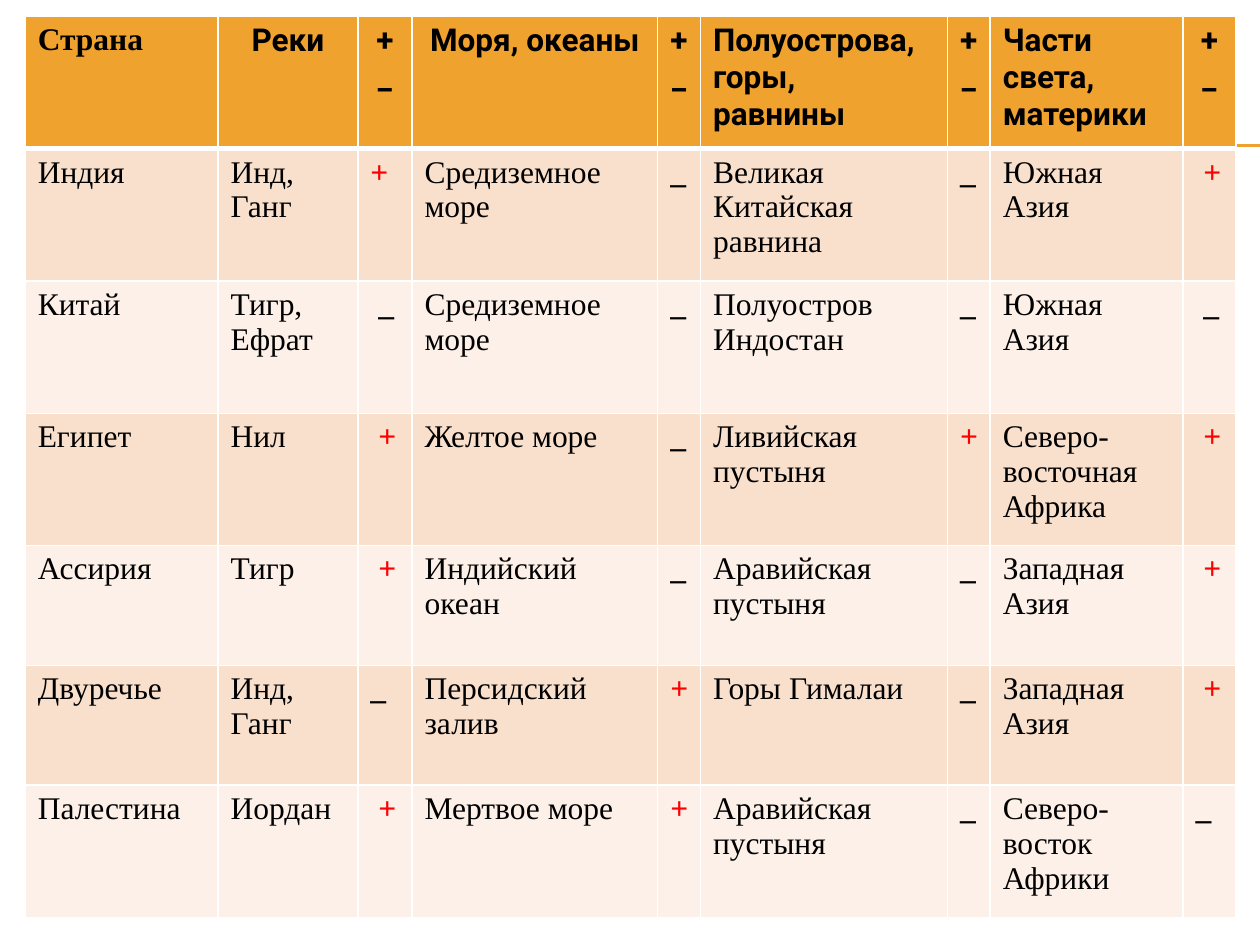
import pptx
import pptx.chart.data
import pptx.dml.color
import pptx.enum.shapes
import pptx.enum.text
import pptx.oxml
import pptx.oxml.ns
import pptx.util
from lxml import etree

Inches, Pt = pptx.util.Inches, pptx.util.Pt
RGBColor = pptx.dml.color.RGBColor
ALIGN = pptx.enum.text.PP_ALIGN

ORANGE = RGBColor(0xF0, 0xA2, 0x2E)
PEACH = RGBColor(0xF9, 0xE0, 0xCD)
CREAM = RGBColor(0xFC, 0xF0, 0xE8)
WHITE = RGBColor(0xFF, 0xFF, 0xFF)
BLACK = RGBColor(0, 0, 0)
RED = RGBColor(0xFF, 0, 0)

SERIF, SANS = "Times New Roman", "Roboto"
COLUMN_WIDTHS = [1.53, 1.11, 0.43, 1.95, 0.34, 1.96, 0.34, 1.53, 0.42]
ROW_HEIGHTS = [1.05, 1.05, 1.05, 1.05, 0.95, 0.95, 1.05]
MARKS = "+\n_"
HEADER = ["Страна", "Реки", MARKS, "Моря, океаны", MARKS,
          "Полуострова, горы, равнины", MARKS, "Части света, материки", MARKS]
COUNTRIES = [
    ["Индия", "Инд, Ганг", "+", "Средиземное море", "_",
     "Великая Китайская равнина", "_", "Южная Азия", " +"],
    ["Китай", "Тигр, Ефрат", " _", "Средиземное море", "_",
     "Полуостров Индостан", "_", "Южная Азия", " _"],
    ["Египет", "Нил", " +", "Желтое море", "_",
     "Ливийская пустыня", "+", "Северо-восточная Африка", " +"],
    ["Ассирия", "Тигр", " +", "Индийский океан", "_",
     "Аравийская пустыня", "_", "Западная Азия", " +"],
    ["Двуречье", "Инд, Ганг", "_", "Персидский залив", "+",
     "Горы Гималаи", "_", "Западная Азия", " +"],
    ["Палестина", "Иордан", " +", "Мертвое море", "+",
     "Аравийская пустыня", "_", "Северо-восток Африки", "_"],
]


def set_borders(cell, **widths):
    """Draw white cell borders with the given widths in points."""
    tcPr = cell._tc.get_or_add_tcPr()
    for side in "LRTB":
        ln = etree.SubElement(tcPr, pptx.oxml.ns.qn(f"a:ln{side}"),
                              w=str(Pt(widths.get(side, 1))))
        fill = etree.SubElement(ln, pptx.oxml.ns.qn("a:solidFill"))
        etree.SubElement(fill, pptx.oxml.ns.qn("a:srgbClr"), val=str(WHITE))


def fill_cell(cell, text, fill, align, font, color, bold):
    """Fill a cell and write its lines in one format."""
    cell.fill.solid()
    cell.fill.fore_color.rgb = fill
    cell.text_frame.text = text
    for p in cell.text_frame.paragraphs:
        p.alignment = align
        for r in p.runs:
            for name, value in {"name": font, "size": Pt(18), "bold": bold}.items():
                setattr(r.font, name, value)
            r.font.color.rgb = color


def add_header_row(table):
    """Write the orange row of headings."""
    for col, text in enumerate(HEADER):
        cell = table.cell(0, col)
        set_borders(cell, B=3)
        align = ALIGN.CENTER if col in (1, 3) or text == MARKS else ALIGN.LEFT
        fill_cell(cell, text, ORANGE, align, SANS if col else SERIF, BLACK, True)


def add_country_rows(table):
    """Write the banded rows, with plus marks in red."""
    for row, texts in enumerate(COUNTRIES, 1):
        for col, text in enumerate(texts):
            cell = table.cell(row, col)
            set_borders(cell, T=3 if row == 1 else 1)
            mark = text.strip()
            fill_cell(cell, text, PEACH if row % 2 else CREAM, ALIGN.LEFT, SERIF,
                      RED if mark == "+" else BLACK, mark in ("+", "_"))


def add_geography_table(s, left, top, width, height):
    """Place the table of countries in the given box."""
    table = s.shapes.add_table(len(ROW_HEIGHTS), len(COLUMN_WIDTHS),
                               left, top, width, height).table
    for column, size in zip(table.columns, COLUMN_WIDTHS):
        column.width = Inches(size)
    for row, size in zip(table.rows, ROW_HEIGHTS):
        row.height = Inches(size)
    add_header_row(table)
    add_country_rows(table)


def add_double_rule(s, left, top, width, gap):
    """Place two thin orange lines, one gap apart."""
    for y in (top, top + gap):
        line = s.shapes.add_connector(pptx.enum.shapes.MSO_CONNECTOR.STRAIGHT,
                                      left, y, left + width, y)
        line.line.color.rgb = ORANGE
        line.line.width = Pt(0.75)
        etree.SubElement(line._element.spPr, pptx.oxml.ns.qn("a:effectLst"))


def main():
    """Build and save the slide."""
    prs = pptx.Presentation()
    prs.slide_width, prs.slide_height = Inches(10), Inches(7.5)
    s = prs.slides.add_slide(prs.slide_layouts[6])
    add_double_rule(s, Inches(0.56), Inches(1.15), Inches(9.44), Inches(0.01))
    add_geography_table(s, Inches(0.2), Inches(0.13), Inches(9.61), Inches(7.15))
    prs.save("out.pptx")


if __name__ == "__main__":
    main()
